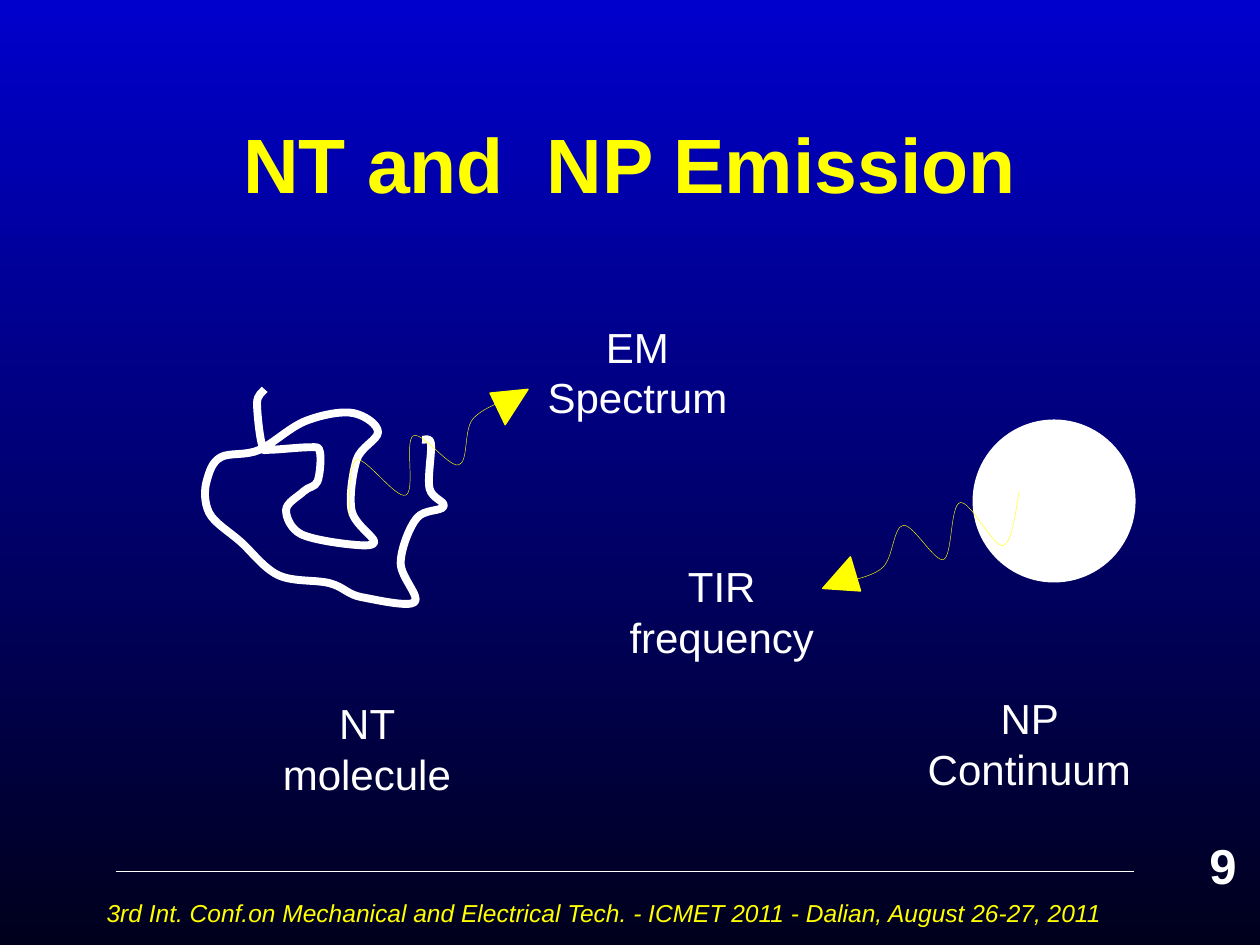
import pptx
import pptx.util
import pptx.dml.color
import pptx.enum.shapes
import pptx.enum.text
import pptx.oxml
import pptx.oxml.ns
from pptx.util import Cm, Pt

COLORS = {"top": "0000CC", "bottom": "00001C", "white": "FFFFFF", "yellow": "FFFF00"}
FONT = "Arial"

TITLE = "NT and  NP Emission"
FOOTER = "3rd Int. Conf.on Mechanical and Electrical Tech. - ICMET 2011 - Dalian, August 26-27, 2011"
PAGE = "9"
# text, left, top, width in cm
LABELS = [
    ("EM Spectrum", 10.21, 6.35, 5.28),
    ("NT molecule", 5.11, 13.94, 4.57),
    ("NP Continuum", 18.21, 13.84, 5.08),
    ("TIR frequency", 11.91, 11.18, 5.28),
]

# Outlines are in units of 0.0254 cm; curves pass smoothly through their points.
UNIT = Cm(2.54) / 100
MOLECULE = [
    (210, 309), (204, 320), (208, 353), (214, 357), (245, 355), (254, 359), (252, 382),
    (241, 390), (227, 405), (239, 424), (277, 432), (297, 430), (279, 405), (283, 365),
    (300, 343), (281, 328), (243, 334), (206, 357), (175, 363), (164, 382), (166, 407),
    (191, 430), (222, 457), (262, 463), (287, 474), (329, 478), (318, 447), (331, 411),
    (352, 402), (341, 388), (342, 352), (335, 349),
]
PHOTONS = [
    {"head": [(389, 312), (419, 309), (401, 337)],
     "wave": [(406, 315), (375, 333), (364, 369), (328, 346), (322, 393), (283, 365), (277, 409)]},
    {"head": [(683, 469), (653, 467), (675, 442)],
     "wave": [(667, 463), (701, 450), (717, 417), (749, 444), (762, 399), (796, 433), (809, 390)]},
]


def rgb(name):
    return pptx.dml.color.RGBColor.from_string(COLORS[name])


def style(shape, color, width, filled):
    shape.shadow.inherit = False
    shape.line.color.rgb = rgb(color)
    shape.line.width = Pt(width)
    if filled:
        shape.fill.solid()
        shape.fill.fore_color.rgb = rgb(color)
    else:
        shape.fill.background()


def add_text(s, text, left, top, width, height=2.31, size=24, color="white",
             bold=False, italic=False, align="CENTER", anchor="TOP"):
    tf = s.shapes.add_textbox(Cm(left), Cm(top), Cm(width), Cm(height)).text_frame
    tf.word_wrap = True
    tf.vertical_anchor = pptx.enum.text.MSO_ANCHOR[anchor]
    p = tf.paragraphs[0]
    p.text = text
    p.alignment = pptx.enum.text.PP_ALIGN[align]
    p.font.name = FONT
    p.font.size = Pt(size)
    p.font.color.rgb = rgb(color)
    p.font.bold = bold
    p.font.italic = italic


def bezier_points(points):
    """Return start, then two control points and an end point per segment."""
    ends = [points[0], *points, points[-1]]
    result = [points[0]]
    for a, b, c, d in zip(ends, ends[1:], ends[2:], ends[3:]):
        result.append(tuple(q + (r - p) / 6 for p, q, r in zip(a, b, c)))
        result.append(tuple(q - (r - p) / 6 for p, q, r in zip(b, c, d)))
        result.append(c)
    return result


def add_outline(s, points, close):
    builder = s.shapes.build_freeform(*points[0], scale=UNIT)
    builder.add_line_segments(points[1:], close=close)
    return builder.convert_to_shape()


def add_curve(s, points, color, width):
    """Draw an outline, turning each three line segments into one Bezier segment."""
    shape = add_outline(s, bezier_points(points), close=False)
    qn = pptx.oxml.ns.qn
    outline = next(shape.element.iter(qn("a:path")))
    lines = outline.findall(qn("a:lnTo"))
    for i in range(0, len(lines), 3):
        curve = pptx.oxml.parse_xml(f"<a:cubicBezTo {pptx.oxml.ns.nsdecls('a')}/>")
        lines[i].addprevious(curve)
        for line in lines[i:i + 3]:
            curve.append(line[0])
            outline.remove(line)
    style(shape, color, width, filled=False)


def main():
    prs = pptx.Presentation()
    prs.slide_width, prs.slide_height = Cm(25.4), Cm(19.05)
    s = prs.slides.add_slide(prs.slide_layouts[6])

    fill = s.background.fill
    fill.gradient()
    fill.gradient_angle = 270
    for stop, name in zip(fill.gradient_stops, ("top", "bottom")):
        stop.color.rgb = rgb(name)

    rule = s.shapes.add_connector(pptx.enum.shapes.MSO_CONNECTOR.STRAIGHT,
                                  Cm(2.33), Cm(17.57), Cm(22.86), Cm(17.57))
    rule.line.color.rgb = rgb("white")
    rule.line.width = Pt(0.75)
    rule.element.spPr.append(pptx.oxml.parse_xml(f"<a:effectLst {pptx.oxml.ns.nsdecls('a')}/>"))

    add_text(s, TITLE, 1.9, 1.7, 21.6, 3.18, 44, "yellow", bold=True, anchor="MIDDLE")
    add_text(s, FOOTER, 1.9, 17.98, 21.6, 1.07, 14, "yellow", italic=True, align="LEFT")

    add_curve(s, MOLECULE, "white", 4.5)
    particle = s.shapes.add_shape(pptx.enum.shapes.MSO_SHAPE.OVAL,
                                  Cm(19.66), Cm(8.51), Cm(3.18), Cm(3.18))
    style(particle, "white", 3, filled=True)
    for photon in PHOTONS:
        style(add_outline(s, photon["head"], close=True), "yellow", 0.85, filled=True)
        add_curve(s, photon["wave"], "yellow", 0.25)
    for label in LABELS:
        add_text(s, *label)
    add_text(s, PAGE, 24.13, 16.71, 1.27, 1.45, 28, bold=True, align="LEFT")

    prs.save("out.pptx")


if __name__ == "__main__":
    main()
